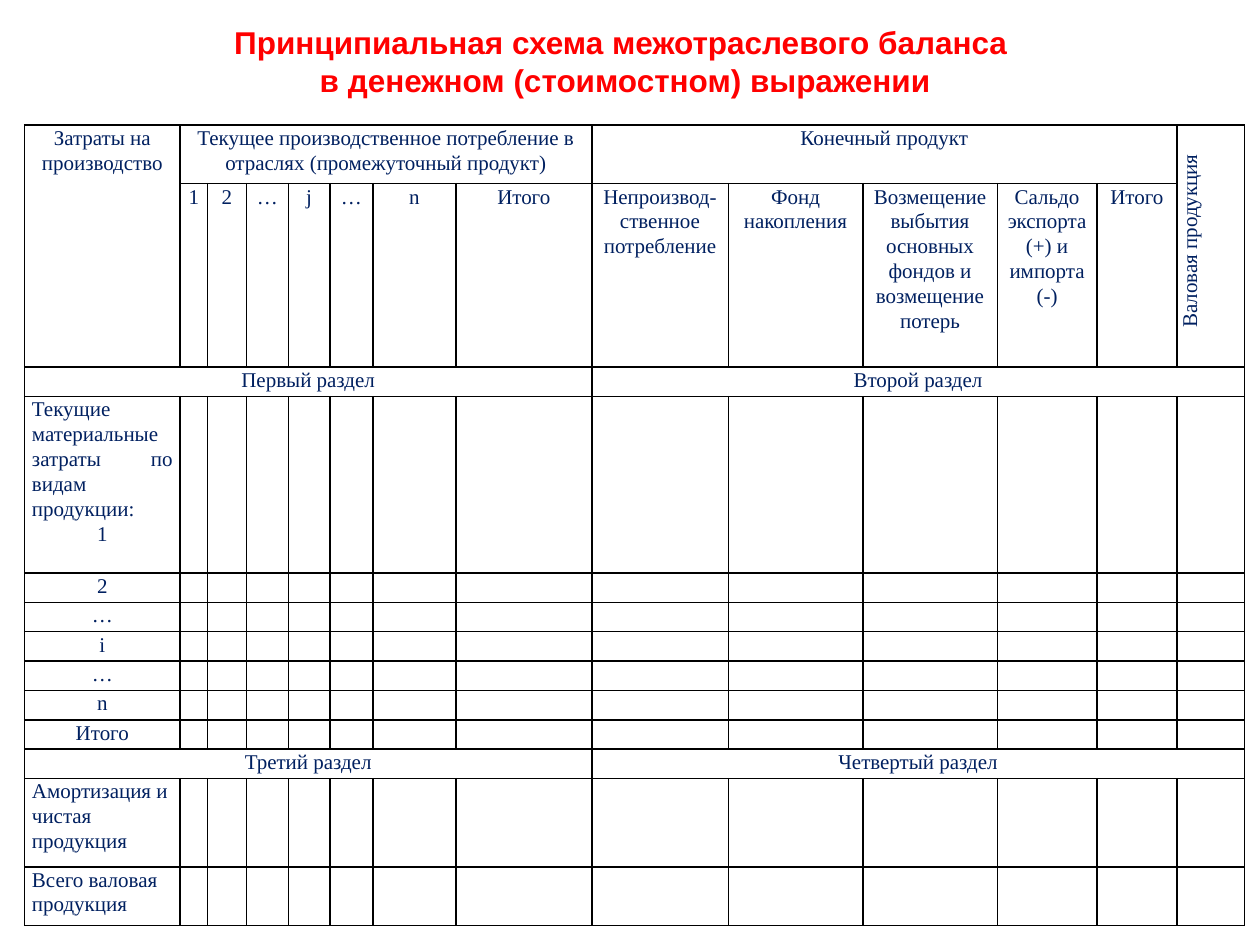
from lxml.etree import SubElement
from pptx import Presentation
from pptx.dml.color import RGBColor
from pptx.enum.text import MSO_ANCHOR, PP_ALIGN as Align
from pptx.oxml.ns import qn
from pptx.util import Pt

COLORS = {"title": "FF0000", "text": "002060", "border": "000000"}

COLUMN_WIDTHS = [88.8, 15.7, 22.3, 24, 23.7, 24.6, 47.4,
                 77.7, 78, 76.9, 76.9, 56.9, 45.7, 38.6]
ROW_HEIGHTS = [33.6, 100.8, 16.8, 100.8] + [16.8] * 7 + [50.4, 33.6]

# (row, column, rows spanned, columns spanned)
MERGES = [(0, 0, 2, 1), (0, 1, 1, 7), (0, 8, 1, 5), (0, 13, 2, 1),
          (2, 0, 1, 8), (2, 8, 1, 6), (10, 0, 1, 8), (10, 8, 1, 6)]

GROUP_HEADERS = {
    0: "Затраты на производство",
    1: "Текущее производственное потребление в отраслях (промежуточный продукт)",
    8: "Конечный продукт",
}
GROSS_OUTPUT = "Валовая продукция"
COLUMN_HEADERS = [
    "1", "2", "…", "j", "…", "n", "Итого",
    "Непроизвод-ственное потребление", "Фонд накопления",
    "Возмещение выбытия основных фондов и возмещение потерь",
    "Сальдо экспорта (+) и импорта (-)", "Итого",
]
SECTIONS = {(2, 0): "Первый раздел", (2, 8): "Второй раздел",
            (10, 0): "Третий раздел", (10, 8): "Четвертый раздел"}
MATERIAL_COSTS = "Текущие материальные затраты по видам продукции:"
INDUSTRY_ROWS = ["2", "…", "i", "…", "n", "Итого"]
VALUE_ADDED_ROWS = ["Амортизация и чистая продукция", "Всего валовая продукция"]


def write_text(paragraph, text, *, font, size, color, bold=False,
               align=Align.CENTER, spacing=1.0):
    paragraph.text = text
    paragraph.alignment = align
    paragraph.line_spacing = spacing
    paragraph.space_before = Pt(0)
    for run in paragraph.runs:
        run.font.name = font
        run.font.size = Pt(size)
        run.font.bold = bold
        run.font.color.rgb = RGBColor.from_string(COLORS[color])


class BalanceSlide:
    table_style = {"font": "Times New Roman", "size": 12, "color": "text",
                   "spacing": 1.07}
    title_style = {"font": "Arial", "size": 18, "color": "title", "bold": True}

    def __init__(self, presentation):
        self.slide = presentation.slides.add_slide(presentation.slide_layouts[5])

    def title(self, text, left, top, width, height):
        shape = self.slide.shapes.title
        shape.left, shape.top = Pt(left), Pt(top)
        shape.width, shape.height = Pt(width), Pt(height)
        shape.text_frame.vertical_anchor = MSO_ANCHOR.TOP
        write_text(shape.text_frame.paragraphs[0], text, **self.title_style)

    def table(self, left, top, column_widths, row_heights, merges):
        frame = self.slide.shapes.add_table(
            len(row_heights), len(column_widths), Pt(left), Pt(top),
            Pt(sum(column_widths)), Pt(sum(row_heights)))
        table = frame.table
        table.first_row = table.horz_banding = False
        for column, width in zip(table.columns, column_widths):
            column.width = Pt(width)
        for row, height in zip(table.rows, row_heights):
            row.height = Pt(height)
        for cell in table.iter_cells():
            self.format_cell(cell)
        for row, column, rows, columns in merges:
            table.cell(row, column).merge(
                table.cell(row + rows - 1, column + columns - 1))
        return table

    def format_cell(self, cell):
        cell.margin_left = cell.margin_right = Pt(4.2)
        cell.margin_top = cell.margin_bottom = Pt(0)
        properties = cell._tc.get_or_add_tcPr()
        for side in ("lnL", "lnR", "lnT", "lnB"):
            line = SubElement(properties, qn(f"a:{side}"), w=str(Pt(1)))
            fill = SubElement(line, qn("a:solidFill"))
            SubElement(fill, qn("a:srgbClr"), val=COLORS["border"])
        cell.fill.background()
        # Empty cells take their line height from the end-of-paragraph size.
        SubElement(cell.text_frame.paragraphs[0]._p, qn("a:endParaRPr"),
                   sz=str(self.table_style["size"] * 100))

    def cell_text(self, cell, text, align=Align.CENTER):
        write_text(cell.text_frame.paragraphs[0], text, align=align,
                   **self.table_style)

    def vertical_text(self, cell, text):
        self.cell_text(cell, text)
        cell._tc.get_or_add_tcPr().set("vert", "vert270")
        paragraph = cell.text_frame.paragraphs[0]
        paragraph._p.get_or_add_pPr().set("marL", str(Pt(5.65)))


def main():
    presentation = Presentation()
    presentation.slide_width, presentation.slide_height = Pt(720), Pt(540)
    balance = BalanceSlide(presentation)
    balance.title("Принципиальная схема межотраслевого баланса \v"
                  "в денежном (стоимостном) выражении", 3, 9.4, 708.5, 51)

    table = balance.table(14.1, 71.4, COLUMN_WIDTHS, ROW_HEIGHTS, MERGES)
    for column, text in GROUP_HEADERS.items():
        balance.cell_text(table.cell(0, column), text)
    balance.vertical_text(table.cell(0, 13), GROSS_OUTPUT)
    for column, text in enumerate(COLUMN_HEADERS, start=1):
        balance.cell_text(table.cell(1, column), text)
    for position, text in SECTIONS.items():
        balance.cell_text(table.cell(*position), text)

    costs = table.cell(3, 0)
    balance.cell_text(costs, MATERIAL_COSTS, Align.JUSTIFY)
    write_text(costs.text_frame.add_paragraph(), "1", **balance.table_style)
    for row, text in enumerate(INDUSTRY_ROWS, start=4):
        balance.cell_text(table.cell(row, 0), text)
    for row, text in enumerate(VALUE_ADDED_ROWS, start=11):
        balance.cell_text(table.cell(row, 0), text, Align.LEFT)

    presentation.save("out.pptx")


if __name__ == "__main__":
    main()
